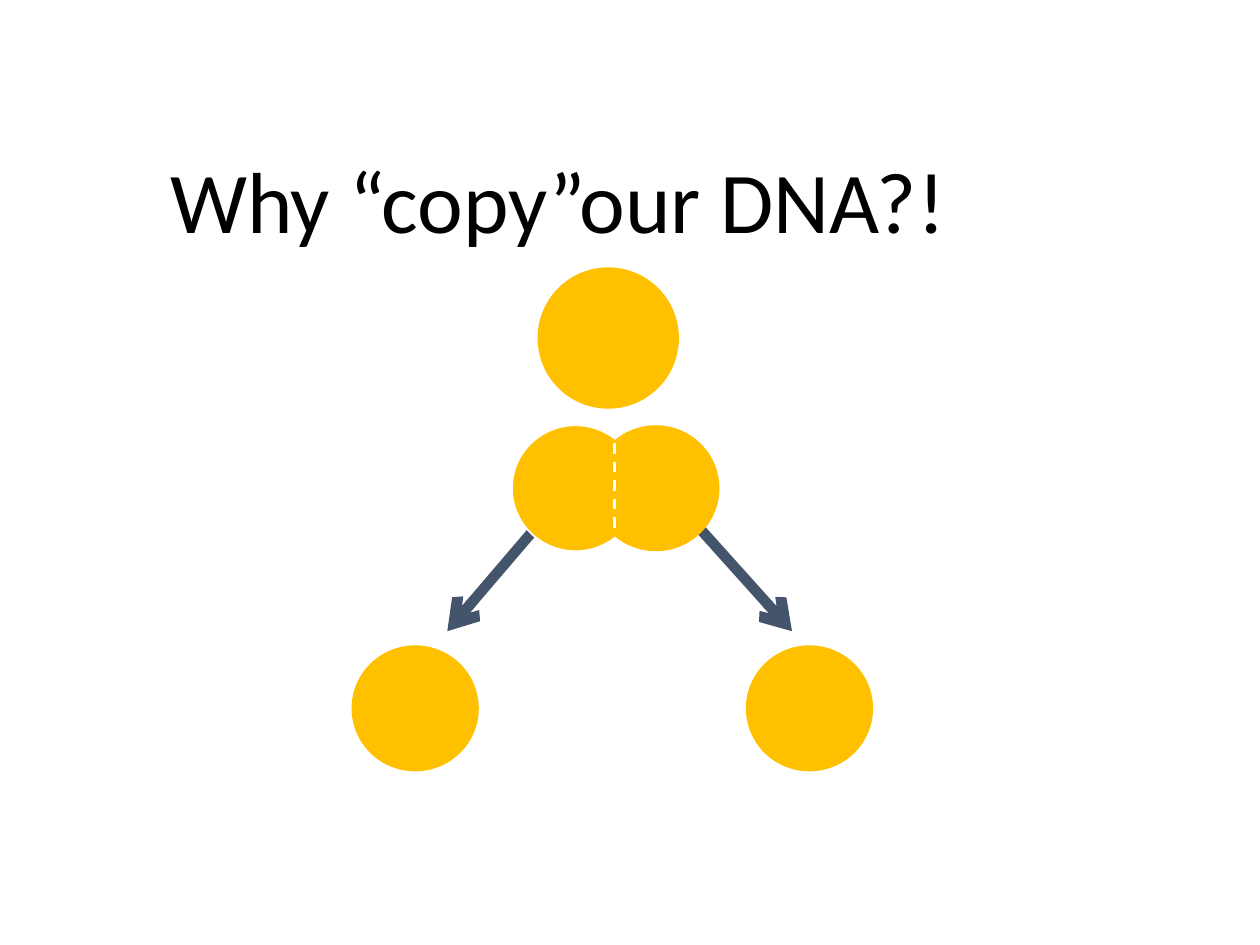
import pptx
import pptx.dml.color
import pptx.enum.dml
import pptx.enum.shapes
import pptx.enum.text
import pptx.oxml.ns
import pptx.util
from lxml import etree

Pt = pptx.util.Pt
GOLD, SLATE, WHITE, BLACK = "FFC000", "44546A", "FFFFFF", "000000"
CELL_SIZE = (72.7, 72)


def rgb(hex_string):
    return pptx.dml.color.RGBColor.from_string(hex_string)


def write_text(holder, text, size, color, font="Calibri", spacing=0.9):
    frame = holder.text_frame
    frame.word_wrap = True
    frame.auto_size = pptx.enum.text.MSO_AUTO_SIZE.NONE
    frame.vertical_anchor = pptx.enum.text.MSO_ANCHOR.MIDDLE
    paragraph = frame.paragraphs[0]
    paragraph.alignment = pptx.enum.text.PP_ALIGN.LEFT
    paragraph.line_spacing = spacing
    run = paragraph.add_run()
    run.text = text
    run.font.name = font
    run.font.size = Pt(size)
    run.font.color.rgb = rgb(color)


def add_title(slide, text):
    title = slide.shapes.title
    title.left, title.top = Pt(90), Pt(83.5)
    title.width, title.height = Pt(540), Pt(67.7)
    write_text(title, text, size=49.5, color=BLACK)


def add_cell(shapes, left, top, size=CELL_SIZE, outline=None):
    cell = shapes.add_shape(pptx.enum.shapes.MSO_SHAPE.OVAL,
                            Pt(left), Pt(top), Pt(size[0]), Pt(size[1]))
    cell.shadow.inherit = False
    cell.fill.solid()
    cell.fill.fore_color.rgb = rgb(GOLD)
    if outline:
        cell.line.color.rgb = rgb(outline)
        cell.line.width = Pt(1)
    else:
        cell.line.fill.background()


def add_line(shapes, start, end, color, width, dashed=False, arrow=False):
    line = shapes.add_connector(pptx.enum.shapes.MSO_CONNECTOR.STRAIGHT,
                                *map(Pt, start + end))
    line.line.color.rgb = rgb(color)
    line.line.width = Pt(width)
    if dashed:
        line.line.dash_style = pptx.enum.dml.MSO_LINE.DASH
    if arrow:
        outline = line.line._get_or_add_ln()
        etree.SubElement(outline, pptx.oxml.ns.qn("a:tailEnd"), type="arrow")
    properties = line._element.spPr
    etree.SubElement(properties, pptx.oxml.ns.qn("a:effectLst"))


def main():
    deck = pptx.Presentation()
    deck.slide_width, deck.slide_height = Pt(720), Pt(540)
    slide = deck.slides.add_slide(deck.slide_layouts.get_by_name("Title Only"))
    shapes = slide.shapes
    add_title(slide, "Why “copy”our DNA?!")

    add_cell(shapes, 307.2, 152.8, size=(80.8, 80.8))
    for start, end in (((306, 301.7), (255.6, 360.7)),
                       ((399.6, 301.7), (452.6, 360.7))):
        add_line(shapes, start, end, SLATE, 6, arrow=True)

    dividing_cell = shapes.add_group_shape()
    add_cell(dividing_cell.shapes, 292.5, 243, outline=WHITE)
    add_cell(dividing_cell.shapes, 338.4, 243)

    for daughter_left in (200.9, 426.2):
        add_cell(shapes, daughter_left, 368.8)
    add_line(shapes, (351.2, 253.4), (351.2, 304.6), WHITE, 1.5, dashed=True)

    deck.save("out.pptx")


if __name__ == "__main__":
    main()
